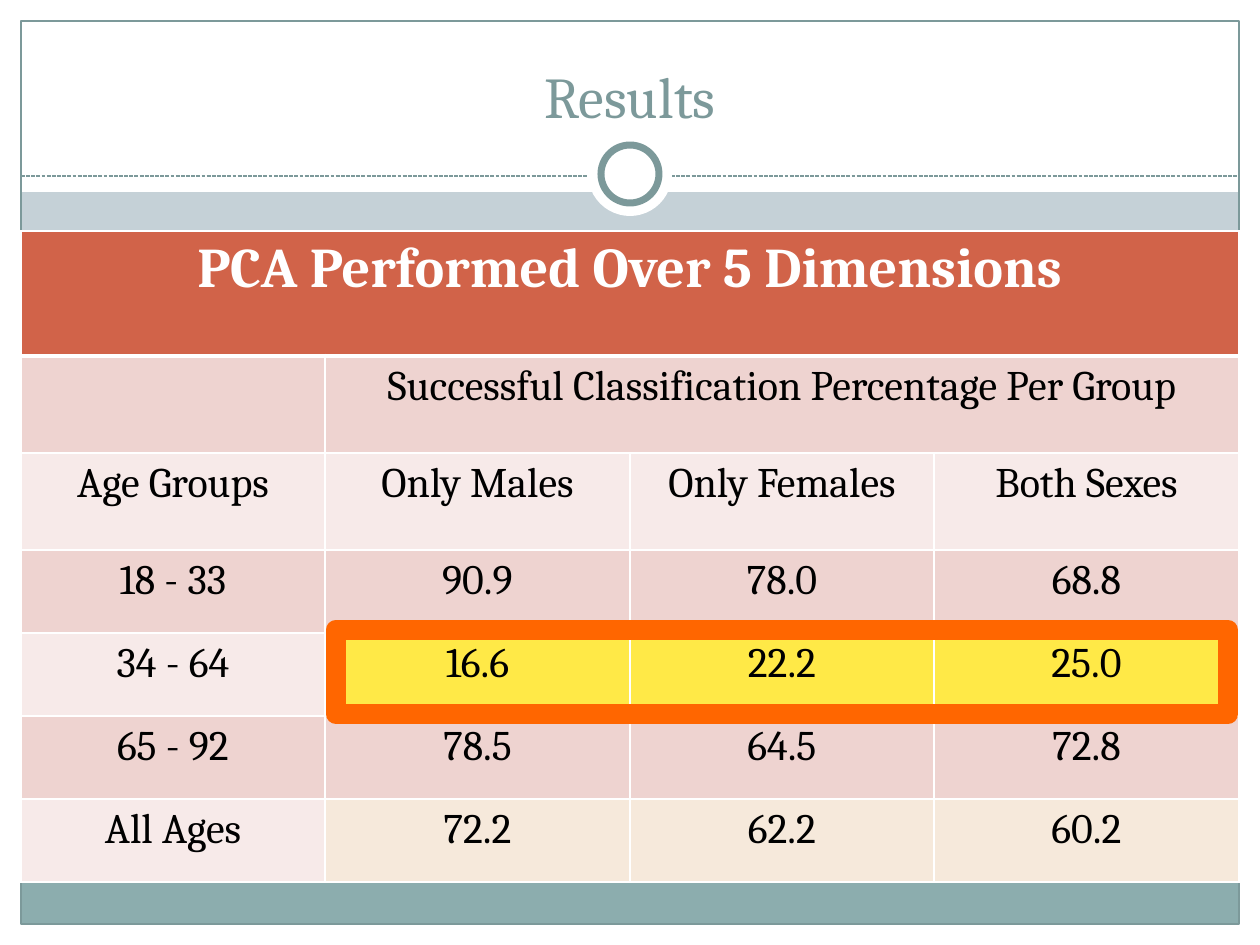
from lxml.etree import SubElement
from pptx import Presentation
from pptx.dml.color import RGBColor
from pptx.enum.dml import MSO_LINE
from pptx.enum.shapes import MSO_CONNECTOR, MSO_SHAPE
from pptx.enum.text import MSO_ANCHOR, PP_ALIGN
from pptx.oxml.ns import qn
from pptx.util import Emu, Pt

PX_PER_INCH = 126
FONT = "Cambria"
WHITE, TEAL, PALE_TEAL, BACKDROP = "FFFFFF", "7C999A", "8CADAE", "C5D1D7"
RUST, PINK, PALE_PINK = "D16349", "EED3D0", "F7EAE9"
YELLOW, CREAM, ORANGE, BLACK = "FFE947", "F6E9DB", "FF6600", "000000"

COLUMN_WIDTHS = [304, 305, 304, 305]
ROW_HEIGHTS = [125, 97, 97, 83, 83, 83, 83]
ROWS = [
    ["PCA Performed Over 5 Dimensions", "", "", ""],
    ["", "Successful Classification Percentage Per Group", "", ""],
    ["Age Groups", "Only Males", "Only Females", "Both Sexes"],
    ["18 - 33", "90.9", "78.0", "68.8"],
    ["34 - 64", "16.6", "22.2", "25.0"],
    ["65 - 92", "78.5", "64.5", "72.8"],
    ["All Ages", "72.2", "62.2", "60.2"],
]
VALUE_FILLS = {4: YELLOW, 6: CREAM}


def px(length):
    return Emu(round(length * 914400 / PX_PER_INCH))


def paint(target, color):
    target.solid()
    target.fore_color.rgb = RGBColor.from_string(color)


def add_box(page, kind, left, top, width, height, fill=None, line=None, weight=0.75):
    box = page.shapes.add_shape(kind, px(left), px(top), px(width), px(height))
    box.shadow.inherit = False
    if fill:
        paint(box.fill, fill)
    else:
        box.fill.background()
    if line:
        paint(box.line.fill, line)
        box.line.width = Pt(weight)
    else:
        box.line.fill.background()


def add_dashed_line(page, left, right, top):
    line = page.shapes.add_connector(
        MSO_CONNECTOR.STRAIGHT, px(left), px(top), px(right), px(top))
    paint(line.line.fill, TEAL)
    line.line.width = Pt(0.75)
    line.line.dash_style = MSO_LINE.SQUARE_DOT
    SubElement(line._element.spPr, qn("a:effectLst"))


def write(frame, text, size, color, bold=False):
    para = frame.paragraphs[0]
    para.alignment = PP_ALIGN.CENTER
    span = para.add_run()
    span.text = text
    span.font.name = FONT
    span.font.size = Pt(size)
    span.font.bold = bold
    span.font.color.rgb = RGBColor.from_string(color)


def add_frame(page):
    rectangle, oval = MSO_SHAPE.RECTANGLE, MSO_SHAPE.OVAL
    add_box(page, rectangle, 0, 924, 1260, 21, WHITE)
    add_box(page, rectangle, 0, 0, 1260, 192, WHITE)
    for left in (0, 1239):
        add_box(page, rectangle, left, 0, 21, 945, WHITE)
    add_box(page, rectangle, 21, 881, 1218, 43, PALE_TEAL)
    add_box(page, rectangle, 21, 21, 1218, 903, line=TEAL)
    add_dashed_line(page, 21, 1239, 176)
    add_box(page, oval, 588, 132, 84, 84, WHITE)
    add_box(page, oval, 601, 145, 58, 58, WHITE, TEAL, 4)


def add_title(page, text):
    title = page.shapes.title
    title.left, title.top, title.width, title.height = px(42), px(32), px(1176), px(104)
    title.text_frame.vertical_anchor = MSO_ANCHOR.BOTTOM
    write(title.text_frame, text, 33, TEAL)
    page.shapes.element.append(title.element)


def set_borders(cell, bottom):
    properties = cell._tc.get_or_add_tcPr()
    for side, weight in (("L", 1), ("R", 1), ("T", 1), ("B", bottom)):
        edge = SubElement(properties, qn(f"a:ln{side}"), w=str(Pt(weight)))
        fill = SubElement(edge, qn("a:solidFill"))
        SubElement(fill, qn("a:srgbClr"), val=WHITE)


def cell_fill(row, column):
    if row == 0:
        return RUST
    if column and row in VALUE_FILLS:
        return VALUE_FILLS[row]
    return PINK if row % 2 else PALE_PINK


def add_results_table(page):
    table = page.shapes.add_table(
        len(ROWS), len(COLUMN_WIDTHS), px(21), px(231),
        px(sum(COLUMN_WIDTHS)), px(sum(ROW_HEIGHTS))).table
    for column, width in zip(table.columns, COLUMN_WIDTHS):
        column.width = px(width)
    for row, height in zip(table.rows, ROW_HEIGHTS):
        row.height = px(height)
    for row, texts in enumerate(ROWS):
        heading = row == 0
        for column, text in enumerate(texts):
            cell = table.cell(row, column)
            set_borders(cell, 3 if heading else 1)
            paint(cell.fill, cell_fill(row, column))
            if text:
                write(cell.text_frame, text, 32 if heading else 24,
                      WHITE if heading else BLACK, heading)
    table.cell(0, 0).merge(table.cell(0, 3))
    table.cell(1, 1).merge(table.cell(1, 3))


def main():
    deck = Presentation()
    deck.slide_width, deck.slide_height = px(1260), px(945)
    page = deck.slides.add_slide(deck.slide_layouts[5])
    paint(page.background.fill, BACKDROP)
    add_frame(page)
    add_title(page, "Results")
    add_results_table(page)
    add_box(page, MSO_SHAPE.RECTANGLE, 336, 630, 892, 84, line=ORANGE, weight=11.5)
    deck.save("out.pptx")


if __name__ == "__main__":
    main()
